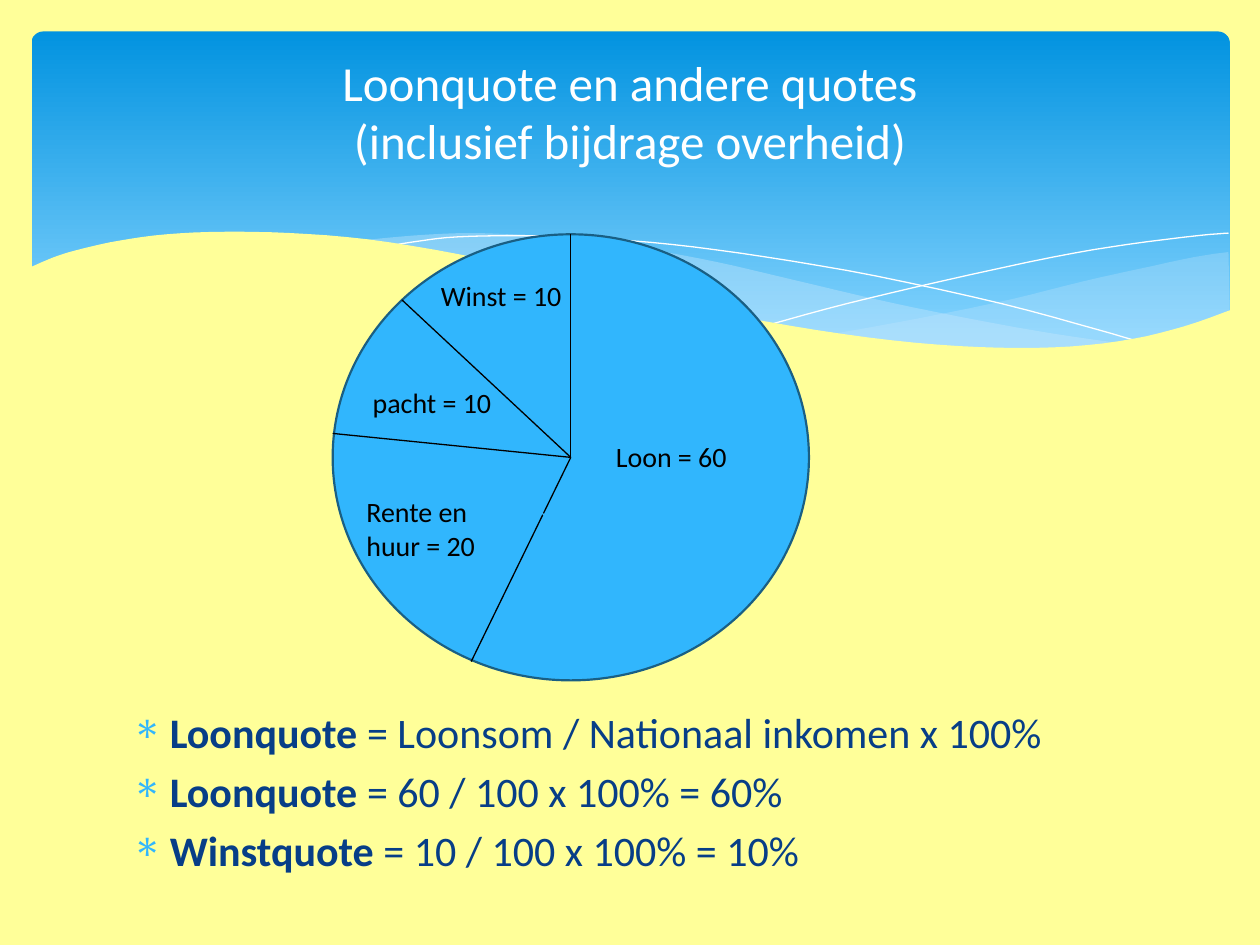
"""Builds a slide on the wage share and other income shares."""
from collections import namedtuple

from lxml.etree import SubElement
from pptx import Presentation
from pptx.dml.color import RGBColor
from pptx.enum.shapes import MSO_CONNECTOR, MSO_SHAPE
from pptx.enum.text import MSO_ANCHOR, PP_ALIGN
from pptx.oxml.ns import qn
from pptx.util import Emu, Pt

PX = 9144
FINE = 10
FONT = "Calibri"
YELLOW = RGBColor(0xFF, 0xFF, 0x99)
WHITE = RGBColor(0xFF, 0xFF, 0xFF)
BLACK = RGBColor(0, 0, 0)
NAVY = RGBColor(0x07, 0x3E, 0x87)
SKY = RGBColor(0x31, 0xB6, 0xFD)
RIM = RGBColor(0x19, 0x5F, 0x84)
BAND_TOP = RGBColor(0x02, 0x93, 0xE0)
BAND_BOTTOM = RGBColor(0x83, 0xD3, 0xFE)
MIST = RGBColor(0xC6, 0xE7, 0xFC)

Box = namedtuple("Box", "left top width height")

RIGHT_WAVE = (
    [(950, 175), (923, 179), (881, 188), (836, 198), (780, 212), (728, 223),
     (681, 232), (636, 240)],
    [(636, 240), (680, 247), (720, 250), (767, 252), (810, 252), (847, 249),
     (888, 242), (924, 232), (951, 222)],
)
MIDDLE_WAVE = (
    [(868, 248), (812, 240), (750, 229), (681, 215), (604, 197), (544, 183),
     (489, 173), (417, 164), (355, 160), (303, 162), (261, 166)],
    [(261, 166), (317, 174), (379, 186), (424, 197), (505, 215), (576, 230),
     (640, 241), (697, 249), (748, 252), (793, 253), (842, 251), (868, 248)],
)
FALLING_LINE = [(284, 170), (310, 166), (338, 163), (391, 162), (444, 164), (508, 169),
                (583, 179), (670, 194), (770, 216), (844, 236), (882, 247)]
RISING_LINE = [(588, 232), (647, 216), (723, 198), (811, 179), (870, 169), (926, 162),
               (950, 160)]
PAGE_EDGE = (
    [(952, 221), (915, 234), (874, 244), (825, 250), (768, 251), (701, 247), (623, 237),
     (530, 220), (422, 195), (340, 177), (267, 165), (205, 160), (152, 159), (107, 161),
     (70, 166), (42, 172), (21, 178), (4, 185), (-2, 188)],
    [(-2, 304), (952, 304)],
)


def px(length):
    """Turn px into EMU."""
    return Emu(length * PX)


def place(box):
    """Return the four EMU lengths of a box."""
    return [px(length) for length in box]


def smooth(points, steps=4):
    """Return a Catmull-Rom curve through the points."""
    padded = [points[0], *points, points[-1]]
    curve = [points[0]]
    for a, b, c, d in zip(padded, padded[1:], padded[2:], padded[3:]):
        for step in range(1, steps + 1):
            t = step / steps
            curve.append(tuple(
                (2 * q + (r - p) * t + (2 * p - 5 * q + 4 * r - s) * t ** 2
                 + (3 * q - p - 3 * r + s) * t ** 3) / 2
                for p, q, r, s in zip(a, b, c, d)))
    return curve


def add_outline(page, box, curves, close):
    """Add a freeform of joined smooth curves, relative to the box."""
    points = [(x * FINE, y * FINE) for curve in curves for x, y in smooth(curve)]
    builder = page.shapes.build_freeform(*points[0], scale=PX / FINE)
    builder.add_line_segments(points[1:], close=close)
    outline = builder.convert_to_shape(px(box.left), px(box.top))
    outline.shadow.inherit = False
    return outline


def add_wave(page, box, curves, color, opacity=100):
    """Add a filled wave."""
    wave = add_outline(page, box, curves, True)
    wave.fill.solid()
    wave.fill.fore_color.rgb = color
    wave.line.fill.background()
    if opacity < 100:
        swatch = wave.fill._xPr.find(qn("a:solidFill"))[0]
        SubElement(swatch, qn("a:alpha"), val=str(opacity * 1000))


def add_band(page, box):
    """Add the blue header band with its waves."""
    band = page.shapes.add_shape(MSO_SHAPE.ROUNDED_RECTANGLE, *place(box))
    band.adjustments[0] = 0.034
    band.shadow.inherit = False
    band.line.fill.background()
    band.fill.gradient()
    band.fill.gradient_angle = 270
    stops = ((0, BAND_TOP), (0.9, BAND_BOTTOM))
    for stop, (position, color) in zip(band.fill.gradient_stops, stops):
        stop.position = position
        stop.color.rgb = color
    add_wave(page, box, RIGHT_WAVE, MIST, 29)
    add_wave(page, box, MIDDLE_WAVE, MIST, 40)
    for curve in (FALLING_LINE, RISING_LINE):
        strand = add_outline(page, box, [curve], False)
        strand.fill.background()
        strand.line.color.rgb = WHITE
        strand.line.width = Pt(0)
    add_wave(page, box, PAGE_EDGE, YELLOW)


def add_text(page, box, size, color):
    """Add a wrapping text box and return its frame and first paragraph."""
    frame = page.shapes.add_textbox(*place(box)).text_frame
    frame.word_wrap = True
    para = frame.paragraphs[0]
    style(para, size, color)
    return frame, para


def style(para, size, color):
    """Set the font of a paragraph."""
    para.font.name = FONT
    para.font.size = Pt(size)
    para.font.color.rgb = color


def add_title(page, box):
    """Add the centred title."""
    frame, para = add_text(page, box, 28, WHITE)
    frame.vertical_anchor = MSO_ANCHOR.MIDDLE
    para.alignment = PP_ALIGN.CENTER
    para.text = "Loonquote en andere quotes\v(inclusief bijdrage overheid)"


def add_formulas(page, box):
    """Add the bulleted formulas."""
    formulas = (
        ("Loonquote", " = Loonsom / Nationaal inkomen x 100%"),
        ("Loonquote", " = 60 / 100 x 100% = 60%"),
        ("Winstquote", " = 10 / 100 x 100% = 10%"),
    )
    frame, para = add_text(page, box, 24, NAVY)
    for index, (term, formula) in enumerate(formulas):
        if index:
            para = frame.add_paragraph()
        properties = para._p.get_or_add_pPr()
        for child in list(properties):
            properties.remove(child)
        properties.set("marL", str(px(30)))
        properties.set("indent", str(px(-30)))
        bullet_color = SubElement(properties, qn("a:buClr"))
        SubElement(bullet_color, qn("a:srgbClr"), val=str(SKY))
        SubElement(properties, qn("a:buChar"), char="∗")
        para.space_before = Pt(4.8)
        style(para, 24, NAVY)
        for text, bold in ((term, True), (formula, False)):
            span = para.add_run()
            span.text = text
            span.font.bold = bold


def add_pie(page, box):
    """Add the income circle with its dividing lines and labels."""
    circle = page.shapes.add_shape(MSO_SHAPE.FLOWCHART_CONNECTOR, *place(box))
    circle.shadow.inherit = False
    circle.fill.solid()
    circle.fill.fore_color.rgb = SKY
    circle.line.color.rgb = RIM
    circle.line.width = Pt(1.25)
    center = (box.width // 2, box.height // 2)
    dividers = (
        (center, (189, 0), BLACK),
        (center, (110, 339), BLACK),
        ((165, 220), (265, 320), SKY),
        (center, (0, 158), BLACK),
        (center, (55, 52), BLACK),
    )
    for start, end, color in dividers:
        ends = [px(edge + length) for point in (start, end)
                for edge, length in zip((box.left, box.top), point)]
        divider = page.shapes.add_connector(MSO_CONNECTOR.STRAIGHT, *ends)
        divider.line.color.rgb = color
        divider.line.width = Pt(0.75)
        SubElement(divider._element.spPr, qn("a:effectLst"))
    labels = (
        ("Loon = 60", 215, 158, 37),
        ("Rente en huur = 20", 17, 202, 64),
        ("pacht = 10", 22, 115, 37),
        ("Winst = 10", 76, 30, 37),
    )
    for text, x, y, height in labels:
        label_box = Box(box.left + x, box.top + y, 147, height)
        add_text(page, label_box, 16, BLACK)[1].text = text


def main():
    """Build and save the deck."""
    deck = Presentation()
    deck.slide_width, deck.slide_height = px(1000), px(750)
    page = deck.slides.add_slide(deck.slide_layouts[6])
    page.background.fill.solid()
    page.background.fill.fore_color.rgb = YELLOW
    add_band(page, Box(25, 25, 951, 270))
    add_formulas(page, Box(95, 556, 810, 142))
    add_title(page, Box(50, 37, 900, 102))
    add_pie(page, Box(264, 186, 378, 354))
    deck.save("out.pptx")


if __name__ == "__main__":
    main()
